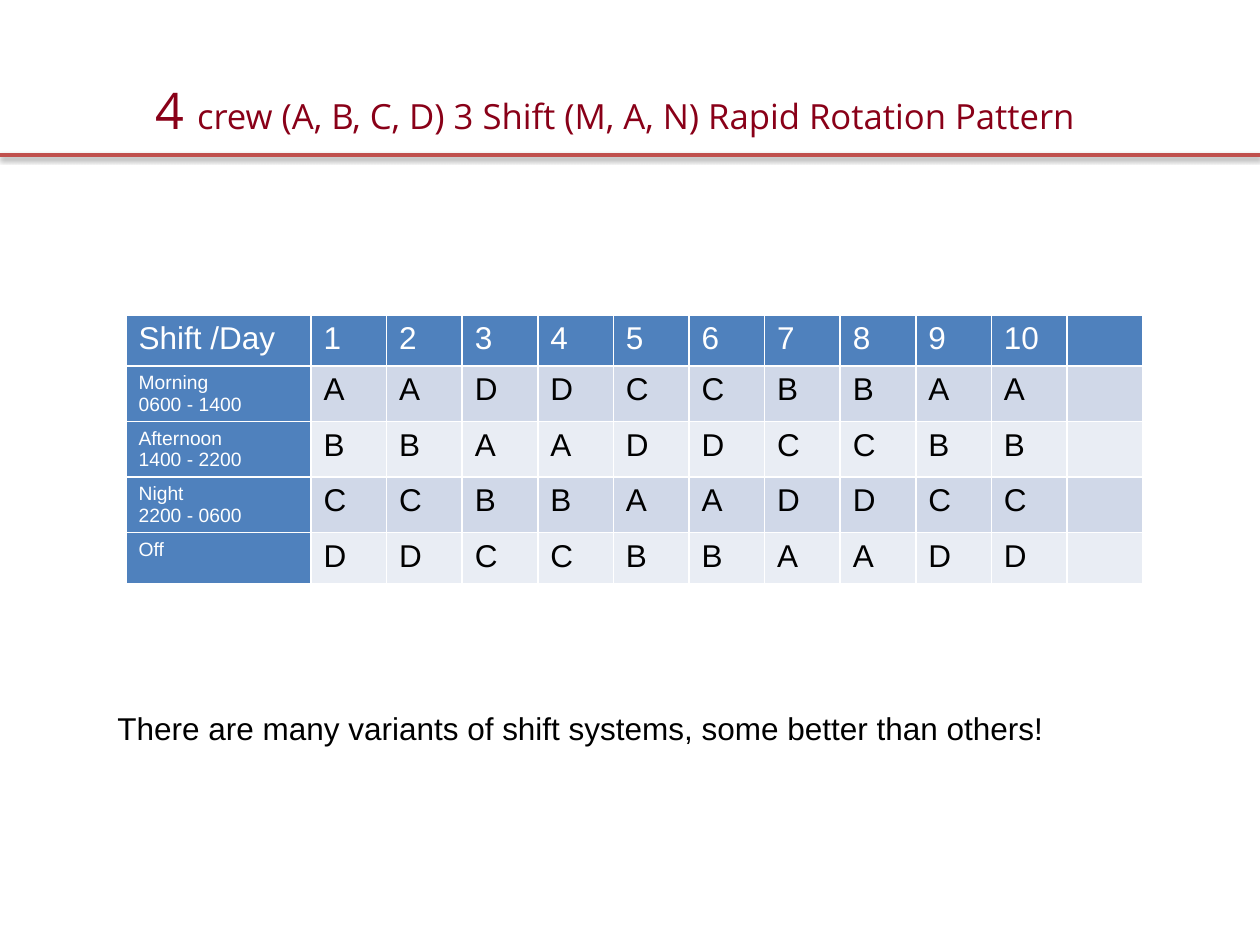
from lxml import etree
from pptx import Presentation
from pptx import util as u
from pptx.dml.color import RGBColor
from pptx.enum import shapes, text
from pptx.oxml.ns import qn

PX_PER_INCH = 126
SLIDE_W, SLIDE_H = 1260, 945
HEADER_BLUE, BANDS = "4F81BD", ("D0D8E8", "E9EDF4")
WHITE, BLACK, MAROON, RULE_RED = "FFFFFF", "000000", "890018", "C0504D"
DAYS = [str(day) for day in range(1, 11)]
ROTA = [
    ("Morning\n0600 - 1400", "AADDCCBBAA"),
    ("Afternoon\n1400 - 2200", "BBAADDCCBB"),
    ("Night\n2200 - 0600", "CCBBAADDCC"),
    ("Off", "DDCCBBAADD"),
]


def px(length):
    return u.Emu(round(length * 914400 / PX_PER_INCH))


def colour(hex_code):
    return RGBColor.from_string(hex_code)


def style_font(font, size, hex_code, name="Arial"):
    font.name, font.size, font.bold = name, u.Pt(size), False
    font.color.rgb = colour(hex_code)


def add_rule(slide, y):
    rule = slide.shapes.add_connector(
        shapes.MSO_CONNECTOR.STRAIGHT, 0, px(y), px(SLIDE_W), px(y))
    rule.line.color.rgb = colour(RULE_RED)
    rule.line.width = u.Pt(2)
    effects = etree.SubElement(rule._element.spPr, qn("a:effectLst"))
    shadow = etree.SubElement(effects, qn("a:outerShdw"), blurRad="40000",
                              dist="20000", dir="5400000", rotWithShape="0")
    shade = etree.SubElement(shadow, qn("a:srgbClr"), val=BLACK)
    etree.SubElement(shade, qn("a:alpha"), val="38000")


def set_title(slide, parts):
    title = slide.shapes.title
    title.left, title.top, title.width, title.height = map(px, (95, 71, 1040, 84))
    title.text_frame.vertical_anchor = text.MSO_ANCHOR.MIDDLE
    heading = title.text_frame.paragraphs[0]
    heading.alignment = text.PP_ALIGN.CENTER
    heading.line_spacing = 0.9
    for words, size in parts:
        run = heading.add_run()
        run.text = words
        style_font(run.font, size, MAROON, "Open Sans")


def fill_cell(cell, words, fill, size, hex_code):
    cell.fill.solid()
    cell.fill.fore_color.rgb = colour(fill)
    cell.text_frame.text = words
    for paragraph in cell.text_frame.paragraphs:
        style_font(paragraph.font, size, hex_code)
        for run in paragraph.runs:
            style_font(run.font, size, hex_code)


def add_rota(slide, left, top, width, label_width, row_height):
    rows = [("Shift /Day", DAYS)] + ROTA
    columns = len(DAYS) + 2
    rota = slide.shapes.add_table(
        len(rows), columns, px(left), px(top),
        px(width), px(row_height * len(rows))).table
    rota.first_col = True
    for index, column in enumerate(rota.columns):
        column.width = px((width - label_width) / (columns - 1) if index else label_width)
    for r, (label, crews) in enumerate(rows):
        rota.rows[r].height = px(row_height)
        for c, words in enumerate([label, *crews, ""]):
            if r == 0:
                look = HEADER_BLUE, 18, WHITE
            elif c == 0:
                look = HEADER_BLUE, 11, WHITE
            else:
                look = BANDS[(r - 1) % 2], 18, BLACK
            fill_cell(rota.cell(r, c), words, *look)


def add_remark(slide, words, left, top, width, height):
    frame = slide.shapes.add_textbox(*map(px, (left, top, width, height))).text_frame
    frame.word_wrap = True
    frame.text = words
    style_font(frame.paragraphs[0].runs[0].font, 18, BLACK)


def main():
    deck = Presentation()
    deck.slide_width, deck.slide_height = px(SLIDE_W), px(SLIDE_H)
    slide = deck.slides.add_slide(deck.slide_layouts[5])
    add_rule(slide, 155)
    set_title(slide, [
        ("4 ", 28.8),
        ("crew (A, B, C, D) 3 Shift (M, A, N) Rapid Rotation Pattern", 19.8),
    ])
    add_rota(slide, 126, 315, 1017, 185, 51)
    add_remark(slide, "There are many variants of shift systems, some better than others!",
               105, 703, 988, 50)
    deck.save("out.pptx")


if __name__ == "__main__":
    main()
